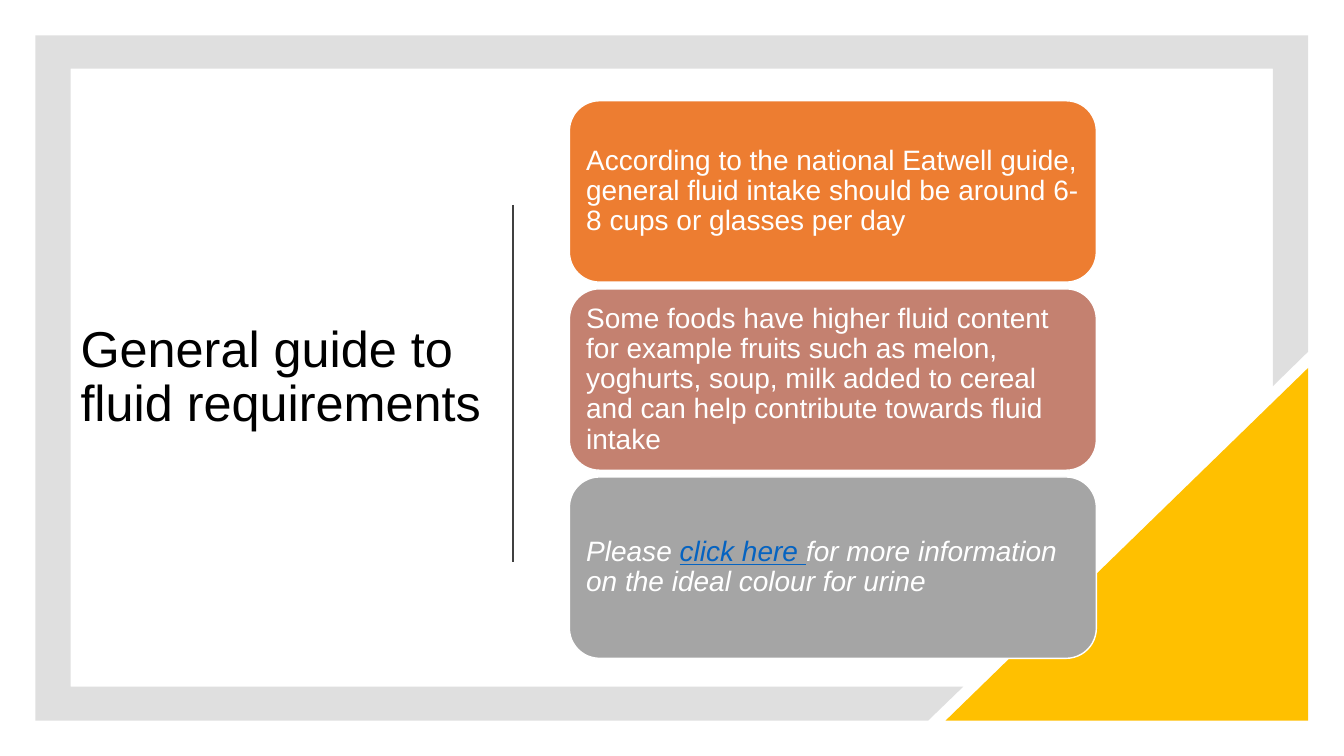
"""Build the fluid requirements slide."""
from dataclasses import dataclass

from lxml import etree
from pptx import Presentation
from pptx import util as u
from pptx.dml.color import RGBColor
from pptx.enum import shapes, text
from pptx.oxml import ns


@dataclass(frozen=True)
class Theme:
    font: str = "Arial"
    title_size: float = 36
    card_size: float = 20
    ink: str = "000000"
    paper: str = "FFFFFF"
    frame: str = "808080"
    accent: str = "FFC000"
    rule: str = "404040"
    link: str = "0563C1"
    cards: tuple = ("ED7D31", "C48170", "A5A5A5")


class SlideBuilder:
    def __init__(self, slide, theme):
        self.shapes = slide.shapes
        self.theme = theme

    def paint(self, shape, fill, line=None):
        shape.shadow.inherit = False
        shape.fill.solid()
        shape.fill.fore_color.rgb = RGBColor.from_string(fill)
        if line:
            shape.line.color.rgb = RGBColor.from_string(line)
            shape.line.width = u.Pt(1)
        else:
            shape.line.fill.background()

    def set_words(self, shape, runs, size, color, italic=False):
        frame = shape.text_frame
        frame.word_wrap = True
        frame.vertical_anchor = text.MSO_ANCHOR.MIDDLE
        paragraph = frame.paragraphs[0]
        paragraph.alignment = text.PP_ALIGN.LEFT
        paragraph.line_spacing = 0.9
        paragraph.font.name = self.theme.font
        paragraph.font.size = u.Pt(size)
        paragraph.font.italic = italic
        for words, is_link in runs:
            run = paragraph.add_run()
            run.text = words
            run.font.underline = is_link
            run.font.color.rgb = RGBColor.from_string(self.theme.link if is_link else color)

    def frame(self, points):
        corners = [(u.Cm(x), u.Cm(y)) for x, y in points]
        builder = self.shapes.build_freeform(*corners[0])
        builder.add_line_segments(corners[1:], close=True)
        shape = builder.convert_to_shape()
        self.paint(shape, self.theme.frame)
        color = shape._element.spPr.find(".//" + ns.qn("a:srgbClr"))
        etree.SubElement(color, ns.qn("a:alpha")).set("val", "25000")

    def corner(self, left, top, width, height):
        shape = self.shapes.add_shape(
            shapes.MSO_SHAPE.RIGHT_TRIANGLE, u.Cm(left), u.Cm(top), u.Cm(width), u.Cm(height))
        shape._element.spPr.find(ns.qn("a:xfrm")).set("flipH", "1")
        self.paint(shape, self.theme.accent)

    def title(self, words, left, top, width, height):
        box = self.shapes.add_textbox(u.Cm(left), u.Cm(top), u.Cm(width), u.Cm(height))
        self.set_words(box, [(words, False)], self.theme.title_size, self.theme.ink)

    def rule(self, x, top, bottom):
        line = self.shapes.add_connector(
            shapes.MSO_CONNECTOR.STRAIGHT, u.Cm(x), u.Cm(top), u.Cm(x), u.Cm(bottom))
        line.line.color.rgb = RGBColor.from_string(self.theme.rule)
        line.line.width = u.Pt(1.5)
        etree.SubElement(line._element.spPr, ns.qn("a:effectLst"))

    def card(self, runs, fill, left, top, width, height, italic):
        shape = self.shapes.add_shape(
            shapes.MSO_SHAPE.ROUNDED_RECTANGLE, u.Cm(left), u.Cm(top), u.Cm(width), u.Cm(height))
        self.paint(shape, fill, self.theme.paper)
        frame = shape.text_frame
        frame.margin_left = frame.margin_right = u.Cm(0.2)
        frame.margin_top = frame.margin_bottom = u.Cm(0.2)
        self.set_words(shape, runs, self.theme.card_size, self.theme.paper, italic)


FRAME = [(0.89, 0.89), (32.97, 0.89), (32.97, 8.86), (32.08, 9.73), (32.08, 1.73),
         (1.78, 1.73), (1.78, 17.3), (24.28, 17.3), (23.39, 18.16), (0.89, 18.16)]
CARDS = [
    ([("According to the national Eatwell guide, general fluid intake should be "
       "around 6-8 cups or glasses per day", False)], False),
    ([("Some foods have higher fluid content for example fruits such as melon, yoghurts, "
       "soup, milk added to cereal and can help contribute towards fluid intake", False)], False),
    ([("Please ", False), ("click here ", True),
      ("for more information on the ideal colour for urine", False)], True),
]
CARD_TOP, CARD_PITCH = 2.54, 4.74


def main():
    presentation = Presentation()
    presentation.slide_width = u.Cm(33.87)
    presentation.slide_height = u.Cm(19.05)
    slide = presentation.slides.add_slide(presentation.slide_layouts[6])
    theme = Theme()
    builder = SlideBuilder(slide, theme)
    builder.frame(FRAME)
    builder.corner(23.83, 9.27, 9.14, 8.89)
    builder.title("General guide to fluid requirements", 1.78, 3.3, 11.68, 12.45)
    builder.rule(12.93, 5.16, 14.15)
    for row, ((runs, italic), fill) in enumerate(zip(CARDS, theme.cards)):
        builder.card(runs, fill, 14.35, CARD_TOP + row * CARD_PITCH, 13.28, 4.57, italic)
    presentation.save("out.pptx")


if __name__ == "__main__":
    main()
